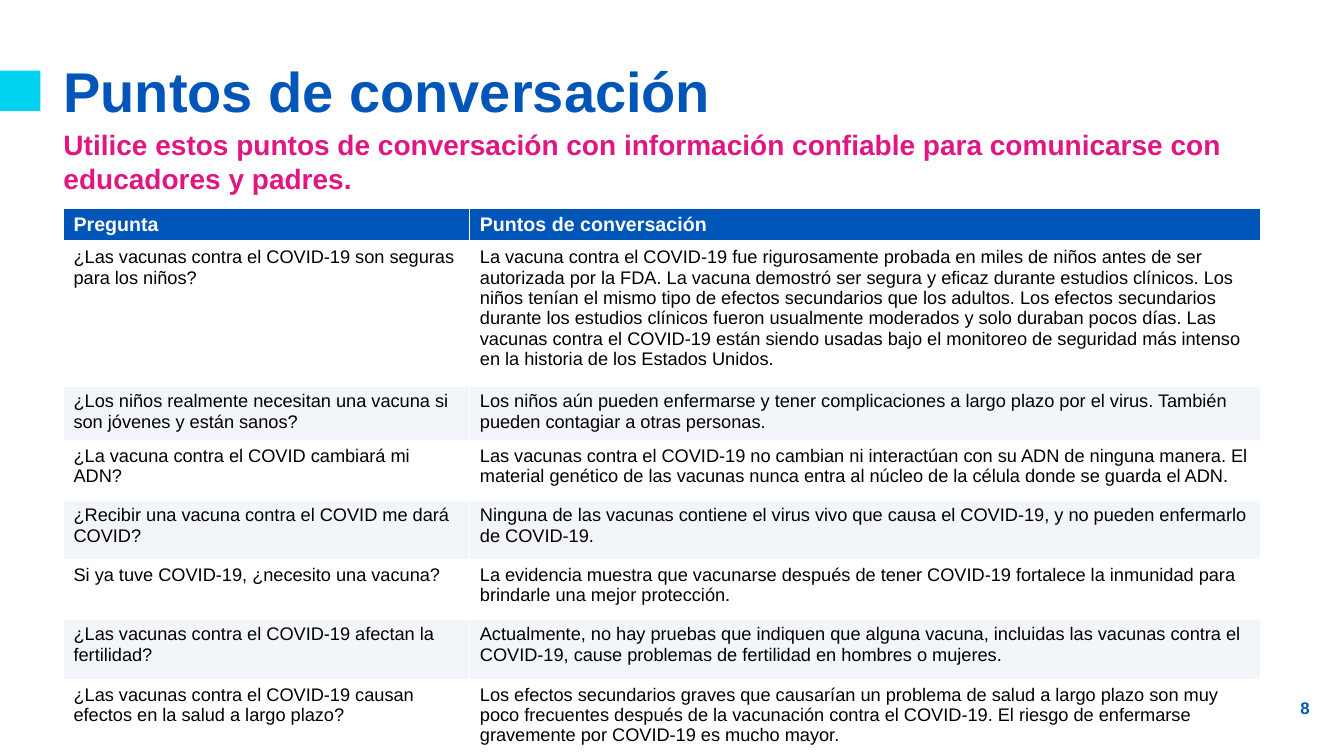
import pptx
import pptx.util
import pptx.dml.color
import pptx.enum.shapes
import pptx.enum.text
import pptx.oxml
import pptx.oxml.ns
from dataclasses import dataclass


@dataclass(frozen=True)
class Theme:
    font: str = "Arial"
    blue: str = "0055B8"
    pink: str = "E01782"
    cyan: str = "00D2F0"
    white: str = "FFFFFF"
    band: str = "F2F6FB"
    black: str = "000000"
    title: int = 40
    lead: int = 20
    head: int = 14
    body: int = 13
    page: int = 12


THEME = Theme()
PX = 9144  # 100 px to the inch
ANCHOR = pptx.enum.text.MSO_ANCHOR
ALIGN = pptx.enum.text.PP_ALIGN

HEADS = ("Pregunta", "Puntos de conversación")
# Question, answer, row height
POINTS = [
    ("¿Las vacunas contra el COVID-19 son seguras para los niños?",
     "La vacuna contra el COVID-19 fue rigurosamente probada en miles de niños antes de ser "
     "autorizada por la FDA. La vacuna demostró ser segura y eficaz durante estudios clínicos. "
     "Los niños tenían el mismo tipo de efectos secundarios que los adultos. Los efectos "
     "secundarios durante los estudios clínicos fueron usualmente moderados y solo duraban "
     "pocos días. Las vacunas contra el COVID-19 están siendo usadas bajo el monitoreo de "
     "seguridad más intenso en la historia de los Estados Unidos.", 143),
    ("¿Los niños realmente necesitan una vacuna si son jóvenes y están sanos?",
     "Los niños aún pueden enfermarse y tener complicaciones a largo plazo por el virus. "
     "También pueden contagiar a otras personas.", 54),
    ("¿La vacuna contra el COVID cambiará mi ADN?",
     "Las vacunas contra el COVID-19 no cambian ni interactúan con su ADN de ninguna manera. "
     "El material genético de las vacunas nunca entra al núcleo de la célula donde se guarda "
     "el ADN.", 59),
    ("¿Recibir una vacuna contra el COVID me dará COVID?",
     "Ninguna de las vacunas contiene el virus vivo que causa el COVID-19, y no pueden "
     "enfermarlo de COVID-19.", 59),
    ("Si ya tuve COVID-19, ¿necesito una vacuna?",
     "La evidencia muestra que vacunarse después de tener COVID-19 fortalece la inmunidad "
     "para brindarle una mejor protección.", 59),
    ("¿Las vacunas contra el COVID-19 afectan la fertilidad?",
     "Actualmente, no hay pruebas que indiquen que alguna vacuna, incluidas las vacunas contra "
     "el COVID-19, cause problemas de fertilidad en hombres o mujeres.", 60),
    ("¿Las vacunas contra el COVID-19 causan efectos en la salud a largo plazo?",
     "Los efectos secundarios graves que causarían un problema de salud a largo plazo son muy "
     "poco frecuentes después de la vacunación contra el COVID-19. El riesgo de enfermarse "
     "gravemente por COVID-19 es mucho mayor.", 70),
]


def px(*nums):
    return [pptx.util.Emu(num * PX) for num in nums]


def rgb(tone):
    return pptx.dml.color.RGBColor.from_string(tone)


def style(para, size, tone, bold):
    font = para.font
    font.name, font.size, font.bold = THEME.font, pptx.util.Pt(size), bold
    font.color.rgb = rgb(tone)


def label(slide, box, text, size, tone, pad=0, anchor=ANCHOR.TOP, align=ALIGN.LEFT):
    frame = slide.shapes.add_textbox(*px(*box)).text_frame
    frame.word_wrap = True
    frame.vertical_anchor = anchor
    frame.margin_left = frame.margin_right = 0
    frame.margin_top, frame.margin_bottom = px(pad, pad)
    para = frame.paragraphs[0]
    para.text = text
    para.alignment = align
    style(para, size, tone, True)
    return para


def header(slide, box):
    left, top, width, height = box
    # Accent square at the slide edge
    mark = slide.shapes.add_shape(pptx.enum.shapes.MSO_SHAPE.RECTANGLE,
                                  *px(0, top + 7, 40, 40))
    mark.shadow.inherit = False
    mark.fill.solid()
    mark.fill.fore_color.rgb = rgb(THEME.cyan)
    mark.line.fill.background()
    # Title and lead sentence
    title = label(slide, (left, top, 756, 61), "Puntos de conversación",
                  THEME.title, THEME.blue, anchor=ANCHOR.BOTTOM)
    title.line_spacing = 0.9
    label(slide, (left, top + 59, width, height - 59),
          "Utilice estos puntos de conversación con información confiable para "
          "comunicarse con educadores y padres.", THEME.lead, THEME.pink, pad=5)


def border(cell, side, points):
    space = pptx.oxml.ns.nsdecls("a")
    line = pptx.oxml.parse_xml(
        f'<a:ln{side} {space} w="{pptx.util.Pt(points)}"><a:solidFill>'
        f'<a:srgbClr val="{THEME.white}"/></a:solidFill></a:ln{side}>')
    cell._tc.get_or_add_tcPr().append(line)


def fill_cell(cell, text, tone, size, ink, bold, base):
    cell.margin_left, cell.margin_right, cell.margin_top, cell.margin_bottom = px(10, 10, 5, 5)
    for side in "LRT":
        border(cell, side, 1)
    border(cell, "B", base)
    cell.fill.solid()
    cell.fill.fore_color.rgb = rgb(tone)
    cell.text = text
    style(cell.text_frame.paragraphs[0], size, ink, bold)


def grid(slide, box):
    rows = [(*HEADS, 31)] + POINTS
    table = slide.shapes.add_table(len(rows), len(HEADS), *px(*box)).table
    table.horz_banding = False
    first = 403
    for col, width in zip(table.columns, px(first, box[2] - first)):
        col.width = width
    for num, (ask, reply, height) in enumerate(rows):
        table.rows[num].height = px(height)[0]
        if num == 0:
            look = (THEME.blue, THEME.head, THEME.white, True, 3)
        else:
            tone = THEME.white if num % 2 else THEME.band
            look = (tone, THEME.body, THEME.black, False, 1)
        for col, text in enumerate((ask, reply)):
            fill_cell(table.cell(num, col), text, *look)


def main():
    deck = pptx.Presentation()
    deck.slide_width, deck.slide_height = px(1333, 750)
    slide = deck.slides.add_slide(deck.slide_layouts[6])
    header(slide, (63, 63, 1193, 136))
    grid(slide, (63, 207, 1187, 535))
    # Page number
    label(slide, (1245, 692, 54, 19), "8", THEME.page, THEME.blue, align=ALIGN.RIGHT)
    deck.save("out.pptx")


if __name__ == "__main__":
    main()
